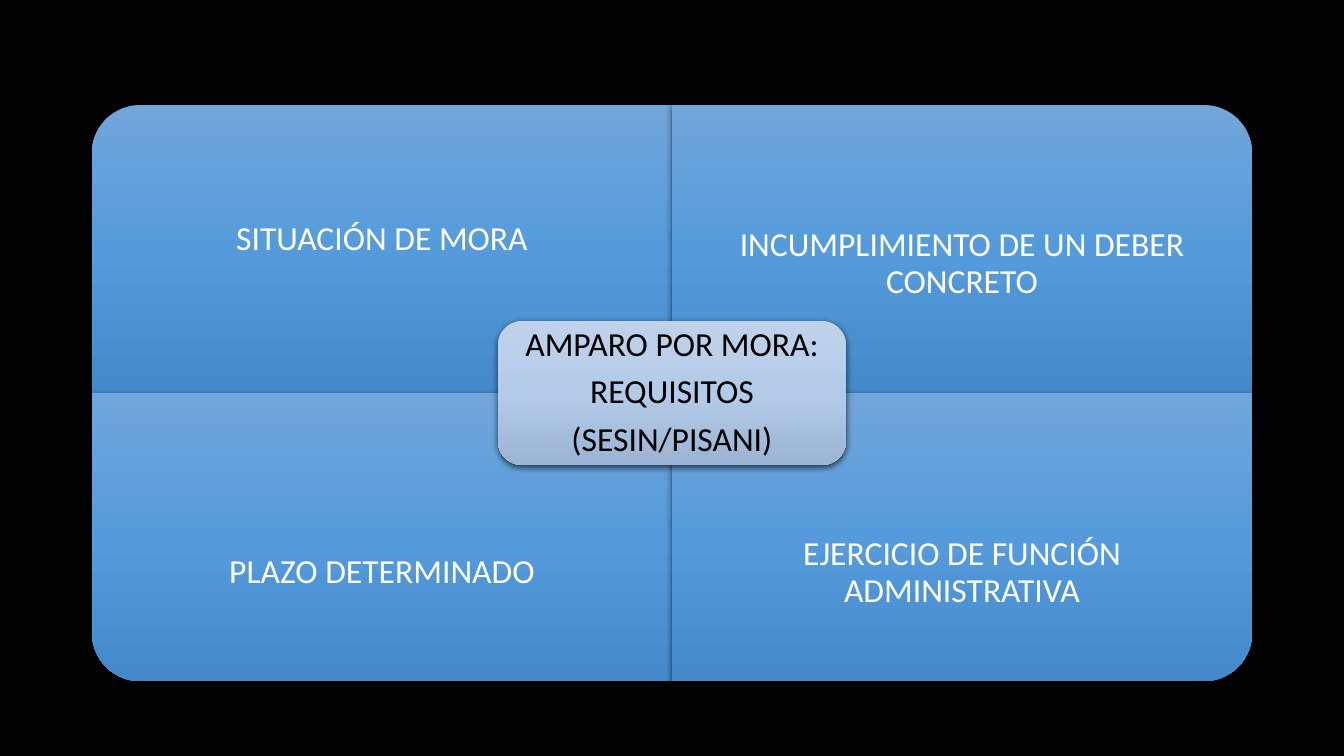
from lxml import etree
from pptx import Presentation
from pptx.dml.color import RGBColor
from pptx.enum.shapes import MSO_SHAPE as Shape
from pptx.enum.text import MSO_ANCHOR as Anchor, PP_ALIGN as Align
from pptx.oxml import parse_xml
from pptx.oxml.ns import nsdecls
from pptx.util import Pt

PX = 9071
COLORS = {"background": "000000", "light_text": "FFFFFF", "dark_text": "000000", "shadow": "000000"}
GRADIENTS = {
    "tile": ("71A6DB", "559BDB", "448ACA"),
    "core": ("C0D2EB", "B3CBE9", "9BB4D3"),
}
LEFT, TOP = 92, 105
TILE_W, TILE_H = 580, 288
CORE_W, CORE_H = 348, 144
LABEL_H = 216
REQUIREMENTS = [
    ("SITUACIÓN DE MORA", 0, 0, 270, 240),
    ("INCUMPLIMIENTO DE UN DEBER CONCRETO", 1, 0, 0, 264),
    ("PLAZO DETERMINADO", 0, 1, 180, 573),
    ("EJERCICIO DE FUNCIÓN ADMINISTRATIVA", 1, 1, 90, 573),
]
TOPIC = ["AMPARO POR MORA: ", "REQUISITOS", "(SESIN/PISANI)"]


def box(center_x, center_y, width, height):
    return [round(v * PX) for v in (center_x - width / 2, center_y - height / 2, width, height)]


def style_panel(panel, gradient):
    panel.line.fill.background()
    panel.fill.background()
    stops = "".join(
        f'<a:gs pos="{i * 50000}"><a:srgbClr val="{color}"/></a:gs>'
        for i, color in enumerate(GRADIENTS[gradient])
    )
    properties = panel.fill._xPr
    no_fill = properties.find("{*}noFill")
    properties.replace(no_fill, parse_xml(
        f'<a:gradFill rotWithShape="0" {nsdecls("a")}><a:gsLst>{stops}</a:gsLst>'
        '<a:lin ang="5400000" scaled="0"/></a:gradFill>'
    ))
    panel.shadow.inherit = False
    effects = properties.find("{*}effectLst")
    effects.append(etree.fromstring(
        f'<a:outerShdw blurRad="57150" dist="19050" dir="5400000" algn="ctr" rotWithShape="0" {nsdecls("a")}>'
        f'<a:srgbClr val="{COLORS["shadow"]}"><a:alpha val="63000"/></a:srgbClr></a:outerShdw>'
    ))


def write_lines(frame, lines, color, inset_x):
    frame.word_wrap = True
    frame.vertical_anchor = Anchor.MIDDLE
    frame.margin_left = frame.margin_right = inset_x * PX
    frame.margin_top = frame.margin_bottom = 0
    for i, line in enumerate(lines):
        paragraph = frame.add_paragraph() if i else frame.paragraphs[0]
        paragraph.alignment = Align.CENTER
        paragraph.line_spacing = 0.9
        paragraph.space_after = Pt(8)
        run = paragraph.add_run()
        run.text = line
        run.font.name = "Calibri"
        run.font.size = Pt(24)
        run.font.color.rgb = RGBColor.from_string(COLORS[color])


def add_requirement(slide, text, column, row, rotation, text_y):
    center_x = LEFT + (column + 0.5) * TILE_W
    center_y = TOP + (row + 0.5) * TILE_H
    size = (TILE_H, TILE_W) if rotation % 180 else (TILE_W, TILE_H)
    tile = slide.shapes.add_shape(Shape.ROUND_1_RECTANGLE, *box(center_x, center_y, *size))
    tile.rotation = rotation
    style_panel(tile, "tile")
    label = slide.shapes.add_textbox(*box(center_x, text_y, TILE_W, LABEL_H))
    write_lines(label.text_frame, [text], "light_text", 19)


def add_topic(slide):
    center = (LEFT + TILE_W, TOP + TILE_H)
    core = slide.shapes.add_shape(Shape.ROUNDED_RECTANGLE, *box(*center, CORE_W, CORE_H))
    style_panel(core, "core")
    write_lines(core.text_frame, TOPIC, "dark_text", 17)


def main():
    deck = Presentation()
    deck.slide_width, deck.slide_height = 1344 * PX, 756 * PX
    slide = deck.slides.add_slide(deck.slide_layouts[6])
    background = slide.background.fill
    background.solid()
    background.fore_color.rgb = RGBColor.from_string(COLORS["background"])
    for requirement in REQUIREMENTS:
        add_requirement(slide, *requirement)
    add_topic(slide)
    deck.save("out.pptx")


if __name__ == "__main__":
    main()
